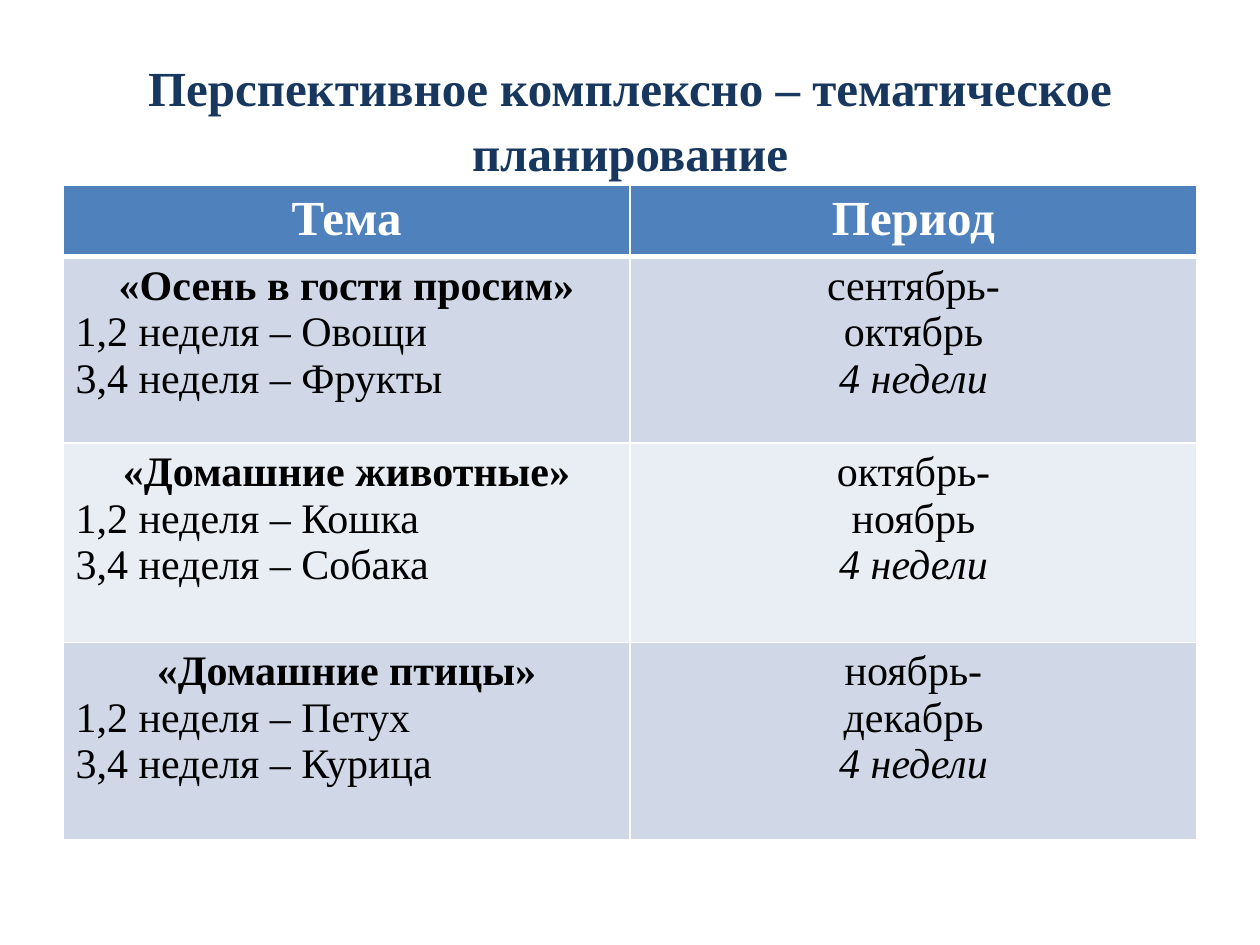
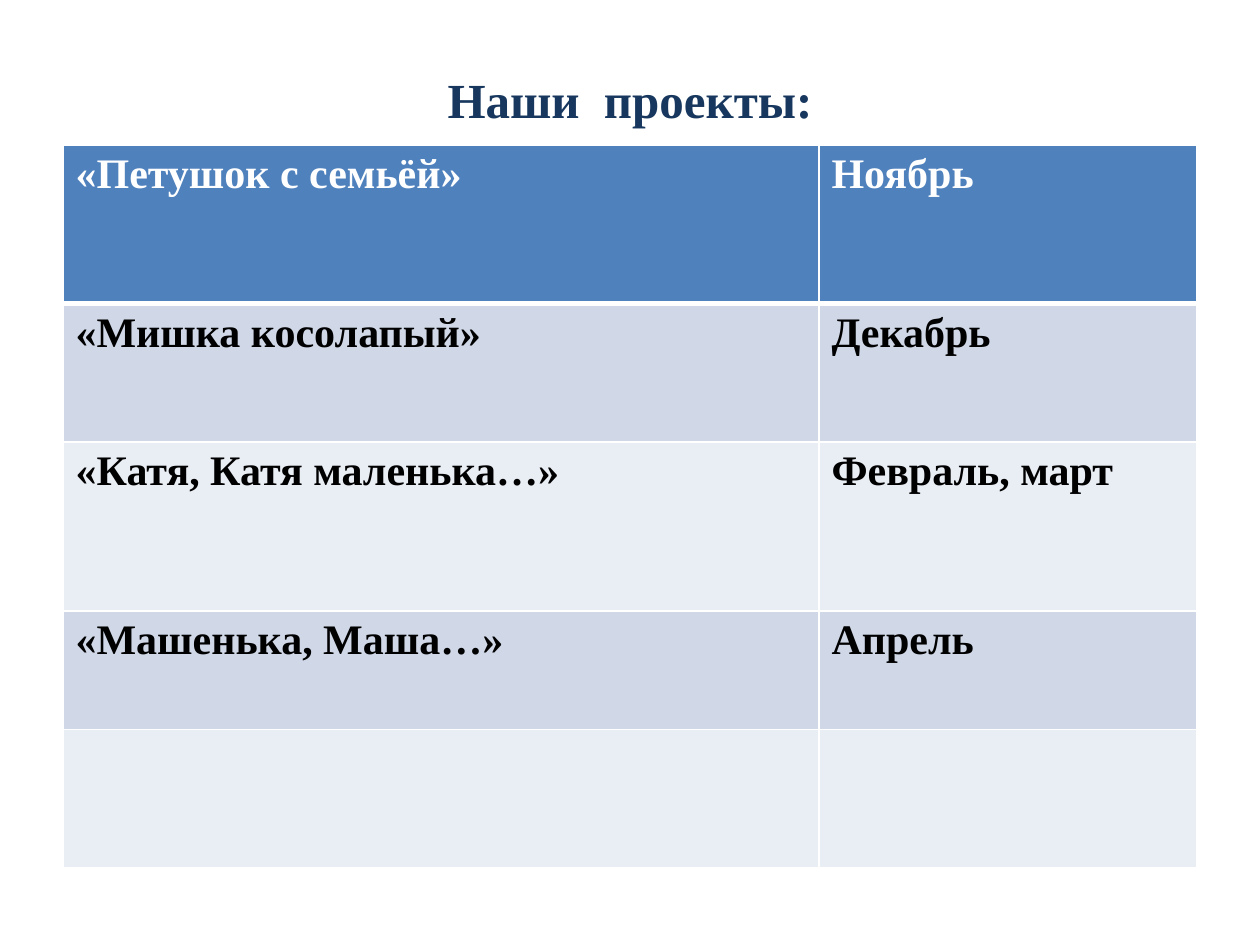
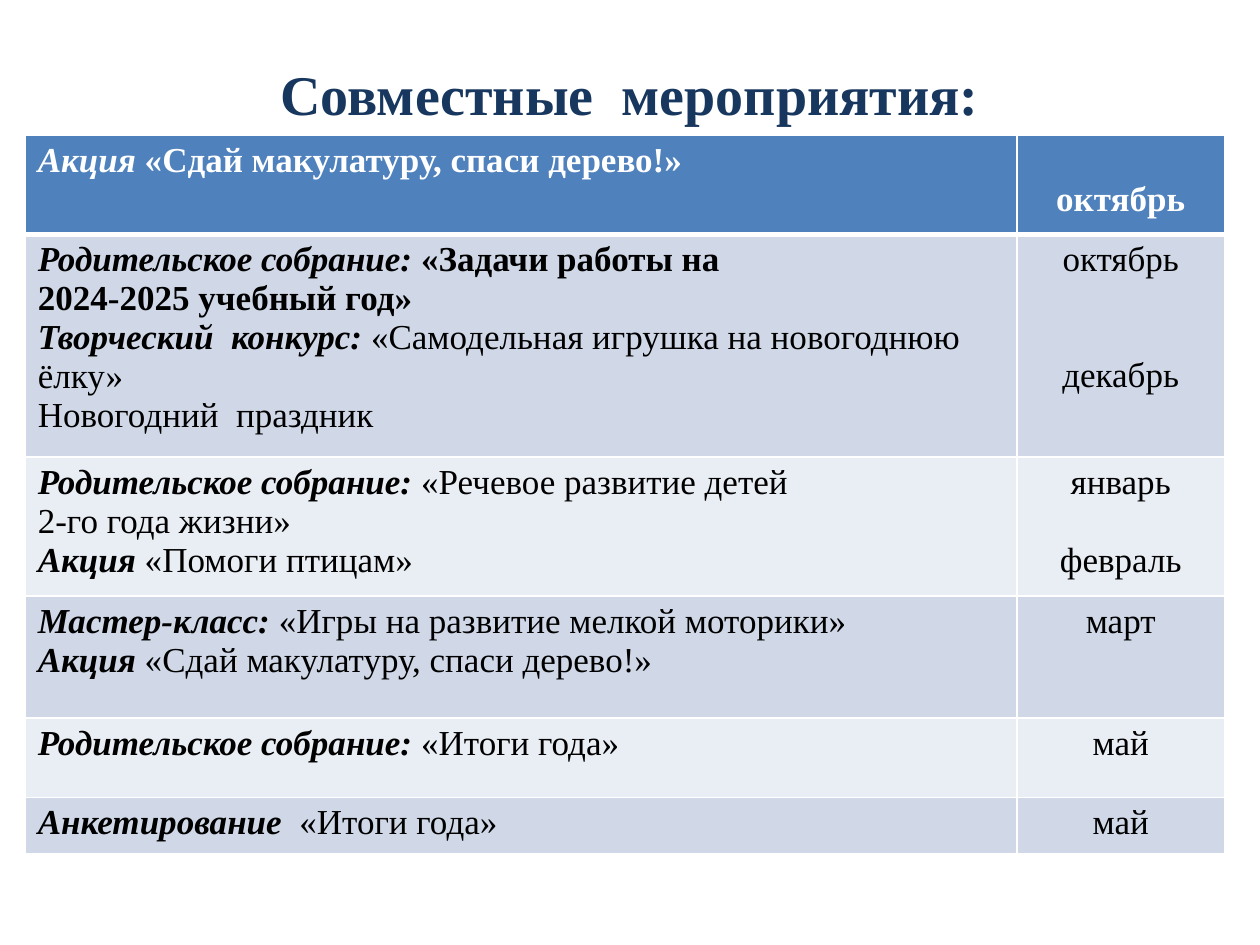
from lxml.etree import SubElement, fromstring
from pptx import Presentation
from pptx.dml.color import RGBColor
from pptx.enum.text import MSO_ANCHOR, PP_ALIGN
from pptx.oxml.ns import nsdecls, qn
from pptx.util import Inches, Pt

FONT = "Times New Roman"
NAVY, BLUE, WHITE, BLACK = "17375E", "4F81BD", "FFFFFF", "000000"
BANDS = ("D0D8E8", "E9EDF4")
LEFT, CENTER = PP_ALIGN.LEFT, PP_ALIGN.CENTER
BOLD = {"bold": True}
ITALIC = {"italic": True}
LEAD = {"bold": True, "italic": True}
LINE_GAP = 22


def color(value):
    """Turn a hex string into a colour."""
    return RGBColor.from_string(value)


def line(*runs, align=LEFT, before=0):
    """Describe one paragraph made of plain strings or (text, format) pairs."""
    pairs = [(run, {}) if isinstance(run, str) else run for run in runs]
    return {"runs": pairs, "align": align, "before": before}


def centered(text, before=0, **formats):
    """Describe one centred paragraph with a single run."""
    return line((text, formats), align=CENTER, before=before)


def write_lines(frame, lines, size, ink, **shared):
    """Fill a text frame with described paragraphs."""
    for index, content in enumerate(lines):
        paragraph = frame.add_paragraph() if index else frame.paragraphs[0]
        paragraph.alignment = content["align"]
        if content["before"]:
            paragraph.space_before = Pt(content["before"])
        for text, formats in content["runs"]:
            run = paragraph.add_run()
            run.text = text
            run.font.color.rgb = color(ink)
            values = {"name": FONT, "size": Pt(size), "bold": False, "italic": False}
            for name, value in {**values, **formats, **shared}.items():
                setattr(run.font, name, value)


def add_title(slide, text, top, height, size=28):
    """Add the bold navy slide title."""
    shape = slide.shapes.add_textbox(Inches(0.5), Inches(top), Inches(9), Inches(height))
    frame = shape.text_frame
    frame.word_wrap = True
    frame.vertical_anchor = MSO_ANCHOR.MIDDLE
    write_lines(frame, [centered(text)], size, NAVY, bold=True)
    frame.paragraphs[0].line_spacing = 1.1


def add_borders(cell, bottom, top):
    """Draw white borders around a cell."""
    properties = cell._tc.get_or_add_tcPr()
    widths = {"lnL": 1, "lnR": 1, "lnT": top, "lnB": bottom}
    for index, (tag, width) in enumerate(widths.items()):
        border = fromstring(f'<a:{tag} {nsdecls("a")} w="{Pt(width)}"/>')
        fill = SubElement(border, qn("a:solidFill"))
        SubElement(fill, qn("a:srgbClr")).set("val", WHITE)
        properties.insert(index, border)


def add_banded_table(slide, left, top, widths, heights, rows, size, header_size=None):
    """Add a table with a blue header row and banded body rows."""
    frame = slide.shapes.add_table(
        len(rows), len(widths), Inches(left), Inches(top),
        Inches(sum(widths)), Inches(sum(heights)))
    table = frame.table
    for column, width in zip(table.columns, widths):
        column.width = Inches(width)
    for index, (height, contents) in enumerate(zip(heights, rows)):
        table.rows[index].height = Inches(height)
        header = index == 0
        for position, lines in enumerate(contents):
            cell = table.cell(index, position)
            cell.fill.solid()
            cell.fill.fore_color.rgb = color(BLUE if header else BANDS[(index - 1) % 2])
            add_borders(cell, bottom=3 if header else 1, top=3 if index == 1 else 1)
            if header:
                write_lines(cell.text_frame, lines, header_size or size, WHITE, bold=True)
            else:
                write_lines(cell.text_frame, lines, size, BLACK)
    return table


def add_planning(slide):
    """Build the thematic planning slide."""
    add_title(slide, "Перспективное комплексно – тематическое планирование", 0.3, 1.25)
    themes = [
        ("«Осень в гости просим»", "Овощи", "Фрукты", "сентябрь-", "октябрь"),
        ("«Домашние животные»", "Кошка", "Собака", "октябрь-", "ноябрь"),
        ("«Домашние птицы»", "Петух", "Курица", "ноябрь-", "декабрь"),
    ]
    rows = [([centered("Тема")], [centered("Период")])]
    for theme, first, second, start, end in themes:
        rows.append((
            [centered(theme, **BOLD), line(f"1,2 неделя – {first}"), line(f"3,4 неделя – {second}")],
            [centered(start), centered(end), centered("4 недели", **ITALIC)]))
    add_banded_table(slide, 0.5, 1.47, (4.5, 4.5), (0.52, 1.48, 1.58, 1.57), rows, 24, 28)


def add_projects(slide):
    """Build the projects slide."""
    add_title(slide, "Наши  проекты:", 0.3, 0.93)
    projects = [
        ("«Петушок с семьёй»", "Ноябрь"),
        ("«Мишка косолапый»", "Декабрь"),
        ("«Катя, Катя маленька…»", "Февраль, март"),
        ("«Машенька, Маша…»", "Апрель"),
    ]
    rows = [[[line((text, BOLD))] for text in project] for project in projects]
    rows.append(([], []))
    add_banded_table(slide, 0.5, 1.15, (6, 3), (1.26, 1.1, 1.34, 0.94, 1.1), rows, 24)


def add_events(slide):
    """Build the joint events slide."""
    add_title(slide, "Совместные  мероприятия:", 0.36, 0.71, 32)
    meeting = ("Родительское собрание: ", LEAD)
    campaign = ("Акция", LEAD)
    paper = line(campaign, " «Сдай макулатуру, спаси дерево!»")
    rows = [
        ([paper], [centered("октябрь")]),
        ([line(meeting, ("«Задачи работы на", BOLD)),
          line(("2024-2025 учебный год»", BOLD)),
          line(("Творческий  конкурс: ", LEAD), "«Самодельная игрушка на новогоднюю ёлку»"),
          line("Новогодний  праздник")],
         [centered("октябрь"), centered("декабрь", before=2 * LINE_GAP)]),
        ([line(meeting, "«Речевое развитие детей"),
          line("2-го года жизни»"),
          line(campaign, " «Помоги птицам»")],
         [centered("январь"), centered("февраль", before=LINE_GAP)]),
        ([line(("Мастер-класс: ", LEAD), "«Игры на развитие мелкой моторики»"), paper],
         [centered("март")]),
        ([line(meeting, "«Итоги года»")], [centered("май")]),
        ([line(("Анкетирование  ", LEAD), "«Итоги года»")], [centered("май")]),
    ]
    heights = (0.79, 1.63, 1.03, 0.97, 0.63, 0.45)
    table = add_banded_table(slide, 0.2, 1.07, (7.87, 1.65), heights, rows, 20)
    table.cell(0, 1).margin_top = Inches(0.36)


def main():
    """Build and save the presentation."""
    presentation = Presentation()
    presentation.slide_width = Inches(10)
    presentation.slide_height = Inches(7.5)
    for build in (add_planning, add_projects, add_events):
        build(presentation.slides.add_slide(presentation.slide_layouts[6]))
    presentation.save("out.pptx")


if __name__ == "__main__":
    main()
